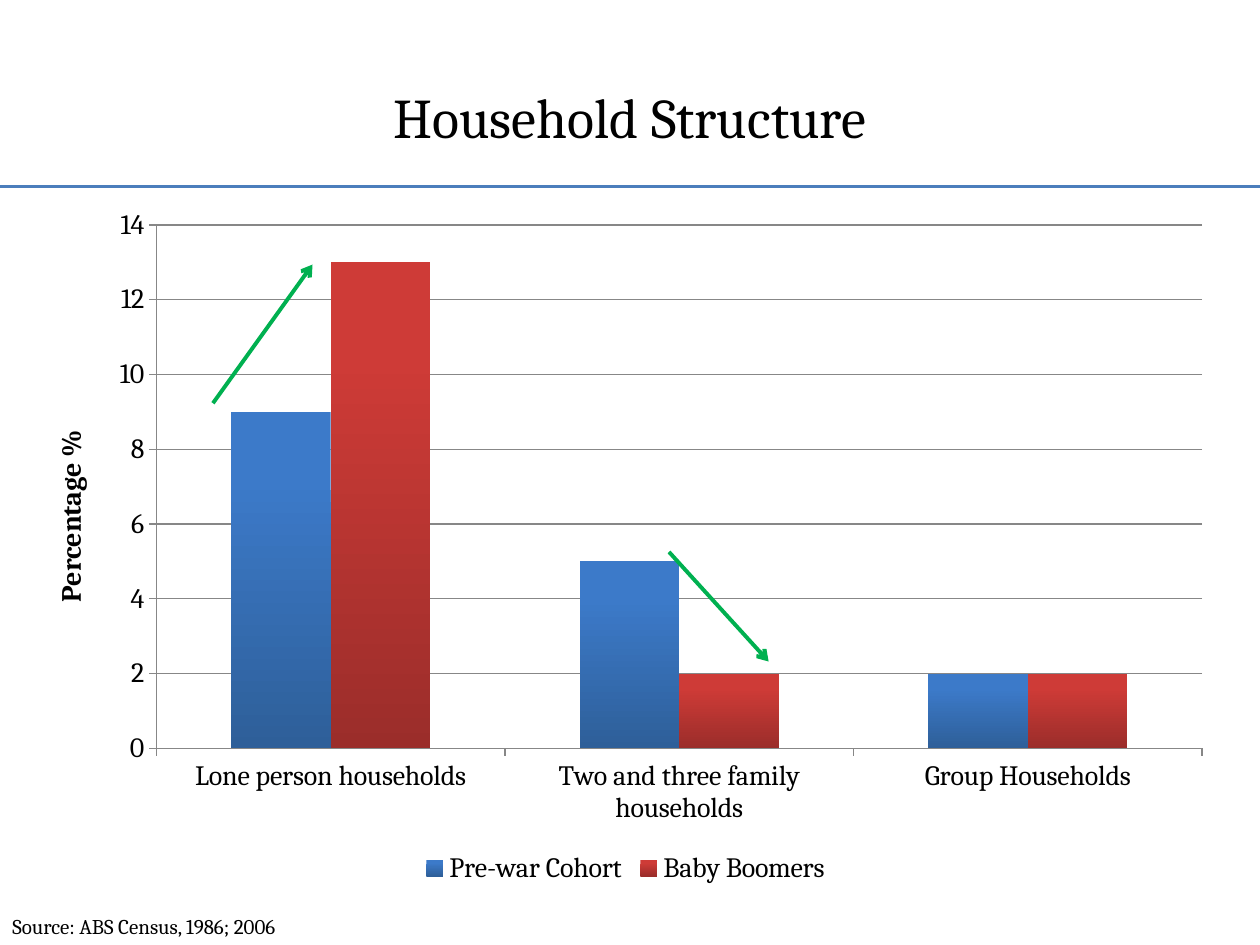
from dataclasses import dataclass

from lxml.etree import SubElement
from pptx import Presentation
from pptx.chart.data import CategoryChartData
from pptx.dml.color import RGBColor as Color
from pptx.enum.chart import XL_CHART_TYPE as ChartType
from pptx.enum.chart import XL_LEGEND_POSITION as LegendPosition
from pptx.enum.chart import XL_TICK_MARK as TickMark
from pptx.enum.shapes import MSO_CONNECTOR as Connector
from pptx.enum.text import MSO_ANCHOR as Anchor
from pptx.enum.text import PP_ALIGN as Align
from pptx.oxml.ns import qn
from pptx.util import Pt


@dataclass(frozen=True)
class Theme:
    """Colours and type sizes of the slide."""
    font: str = "Cambria"
    ink: str = "000000"
    rule: str = "4B7EBC"
    trend: str = "00B050"
    grid: str = "878787"
    title: int = 32
    chart: int = 16
    note: int = 12


@dataclass(frozen=True)
class Series:
    """A cohort's values and its bar colours from top to bottom."""
    name: str
    values: tuple[int, ...]
    top: str
    bottom: str


@dataclass(frozen=True)
class Line:
    """A straight line between two points, in points."""
    start: tuple[float, float]
    end: tuple[float, float]
    color: str
    width: float
    arrow: bool = False


THEME = Theme()
CATEGORIES = ("Lone person households", "Two and three family households",
              "Group Households")
COHORTS = (
    Series("Pre-war Cohort", (9, 5, 2), "3C7AC9", "2E5F99"),
    Series("Baby Boomers", (13, 2, 2), "CE3B37", "9B2D2A"),
)
TITLE_RULE = Line((0, 106.6), (720, 106.6), THEME.rule, 1.5)
TRENDS = (
    Line((121.7, 230.4), (178.6, 151.2), THEME.trend, 2.25, True),
    Line((382.3, 315.4), (439.2, 378), THEME.trend, 2.25, True),
)


def style_font(font, size: int, bold: bool = False) -> None:
    """Apply the theme's typeface and ink."""
    font.name, font.size, font.bold = THEME.font, Pt(size), bold
    font.color.rgb = Color.from_string(THEME.ink)


def write_text(frame, text: str, *, size: int, bold: bool = False,
               align: Align | None = None) -> None:
    """Put one formatted paragraph into a text frame."""
    para = frame.paragraphs[0]
    para.alignment = align
    span = para.add_run()
    span.text = text
    style_font(span.font, size, bold)


def place(shape, left: float, top: float, width: float, height: float) -> None:
    """Move and size a shape, in points."""
    shape.left, shape.top = Pt(left), Pt(top)
    shape.width, shape.height = Pt(width), Pt(height)


def draw_line(page, line: Line) -> None:
    """Draw a flat line, with an arrowhead at its end if asked."""
    points = [Pt(value) for value in (*line.start, *line.end)]
    connector = page.shapes.add_connector(Connector.STRAIGHT, *points)
    connector.line.color.rgb = Color.from_string(line.color)
    connector.line.width = Pt(line.width)
    if line.arrow:
        outline = connector.line._get_or_add_ln()
        SubElement(outline, qn("a:tailEnd"), type="arrow")
    SubElement(connector._element.spPr, qn("a:effectLst"))


def style_axis(axis) -> None:
    """Give an axis its labels, ticks and line."""
    style_font(axis.tick_labels.font, THEME.chart)
    axis.major_tick_mark = TickMark.OUTSIDE
    axis.minor_tick_mark = TickMark.NONE
    axis.format.line.color.rgb = Color.from_string(THEME.grid)


def shade_bars(fill, cohort: Series) -> None:
    """Fade the bars downwards from light to dark."""
    fill.gradient()
    fill.gradient_angle = 270
    stops = zip(fill.gradient_stops, (cohort.top, cohort.bottom), (0.2, 1))
    for stop, color, position in stops:
        stop.color.rgb = Color.from_string(color)
        stop.position = position


def draw_chart(page) -> None:
    """Draw the clustered columns of both cohorts."""
    data = CategoryChartData(number_format="General")
    data.categories = CATEGORIES
    for cohort in COHORTS:
        data.add_series(cohort.name, cohort.values)
    chart = page.shapes.add_chart(ChartType.COLUMN_CLUSTERED, Pt(14.4),
                                  Pt(111.6), Pt(686.2), Pt(396.7), data).chart
    style_font(chart.font, THEME.chart)
    chart.has_title = False
    chart.has_legend = True
    chart.legend.position = LegendPosition.BOTTOM
    chart.legend.include_in_layout = False
    style_font(chart.legend.font, THEME.chart)

    for axis in (chart.category_axis, chart.value_axis):
        style_axis(axis)
    value_axis = chart.value_axis
    value_axis.has_major_gridlines = True
    value_axis.major_gridlines.format.line.color.rgb = Color.from_string(THEME.grid)
    write_text(value_axis.axis_title.text_frame, "Percentage %",
               size=THEME.chart, bold=True)

    plot = chart.plots[0]
    plot.gap_width, plot.overlap = 150, 0
    plot.vary_by_categories = False
    for series, cohort in zip(plot.series, COHORTS):
        shade_bars(series.format.fill, cohort)


def main() -> None:
    """Build and save the slide."""
    deck = Presentation()
    deck.slide_width, deck.slide_height = Pt(720), Pt(540)
    page = deck.slides.add_slide(deck.slide_layouts.get_by_name("Title Only"))

    title = page.shapes.title
    place(title, 36, 21.6, 648, 90)
    title.text_frame.vertical_anchor = Anchor.MIDDLE
    write_text(title.text_frame, "Household Structure",
               size=THEME.title, align=Align.CENTER)
    draw_line(page, TITLE_RULE)

    note = page.shapes.add_textbox(0, Pt(518.4), Pt(232.6), Pt(21.6))
    note.text_frame.word_wrap = True
    write_text(note.text_frame, "Source: ABS Census, 1986; 2006", size=THEME.note)

    draw_chart(page)
    for trend in TRENDS:
        draw_line(page, trend)
    deck.save("out.pptx")


if __name__ == "__main__":
    main()
